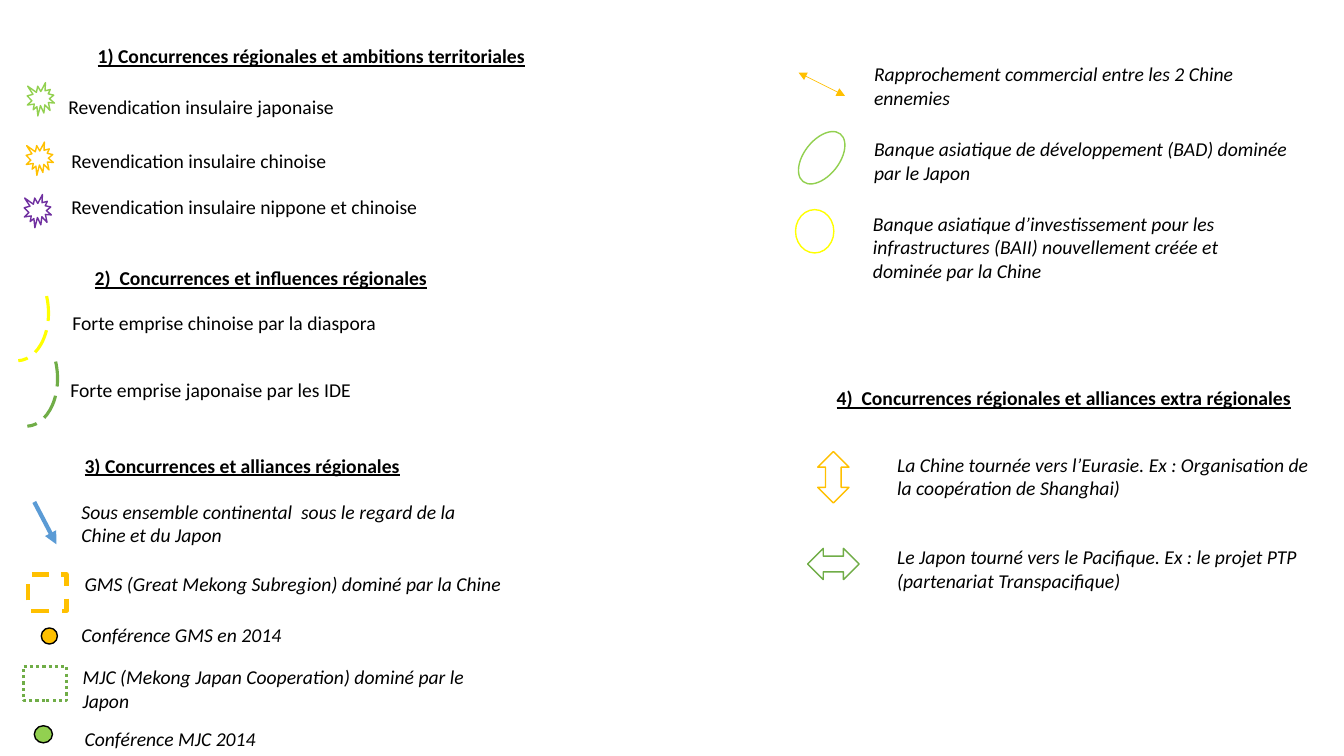
from lxml import etree
from pptx import Presentation
from pptx.dml.color import RGBColor
from pptx.enum.dml import MSO_LINE
from pptx.enum.shapes import MSO_CONNECTOR, MSO_SHAPE
from pptx.enum.text import MSO_AUTO_SIZE
from pptx.oxml.ns import qn
from pptx.util import Inches, Pt

BLACK = RGBColor(0, 0, 0)
BLUE = RGBColor(0x5B, 0x9B, 0xD5)
GOLD = RGBColor(0xFF, 0xC0, 0x00)
YELLOW = RGBColor(0xFF, 0xFF, 0x00)
LIME = RGBColor(0x92, 0xD0, 0x50)
GREEN = RGBColor(0x70, 0xAD, 0x47)
PURPLE = RGBColor(0x70, 0x30, 0xA0)

SEAL, ARC = MSO_SHAPE.EXPLOSION1, MSO_SHAPE.ARC
RECT, OVAL = MSO_SHAPE.RECTANGLE, MSO_SHAPE.OVAL
ARROW = MSO_SHAPE.LEFT_RIGHT_ARROW
STRAIGHT = MSO_CONNECTOR.STRAIGHT
DASH, DOT, LONG = MSO_LINE.DASH, MSO_LINE.ROUND_DOT, MSO_LINE.LONG_DASH
GROW = MSO_AUTO_SIZE.SHAPE_TO_FIT_TEXT

BASE = {"name": "Calibri", "size": Pt(14)}
HEAD = {"bold": True, "underline": True}
PLAIN = {}
ITALIC = {"italic": True}

# style, wrap, then (left, top, width, height, text)
LABELS = [
    (HEAD, False, [
        (0.87, 0.39, 4.47, 0.34, "1) Concurrences régionales et ambitions territoriales"),
        (0.84, 2.59, 3.52, 0.34, "2)  Concurrences et influences régionales"),
        (0.74, 4.45, 3.35, 0.34, "3) Concurrences et alliances régionales"),
        (8.2, 3.78, 4.74, 0.34, "4)  Concurrences régionales et alliances extra régionales"),
    ]),
    (PLAIN, False, [
        (0.58, 0.89, 2.87, 0.34, "Revendication insulaire japonaise"),
        (0.61, 1.43, 2.76, 0.34, "Revendication insulaire chinoise"),
        (0.61, 1.88, 3.67, 0.34, "Revendication insulaire nippone et chinoise"),
        (0.62, 3.04, 3.24, 0.34, "Forte emprise chinoise par la diaspora"),
        (0.6, 3.7, 3.01, 0.34, "Forte emprise japonaise par les IDE"),
    ]),
    (ITALIC, False, [
        (0.74, 5.62, 4.37, 0.34, "GMS (Great Mekong Subregion) dominé par la Chine"),
    ]),
    (ITALIC, True, [
        (0.71, 4.91, 4.33, 0.57,
         "Sous ensemble continental  sous le regard de la Chine et du Japon"),
        (0.71, 6.13, 4.32, 0.34, "Conférence GMS en 2014"),
        (0.72, 6.55, 4.32, 0.57, "MJC (Mekong Japan Cooperation) dominé par le Japon"),
        (0.74, 7.16, 4.32, 0.34, "Conférence MJC 2014"),
        (8.57, 0.57, 4.32, 0.57, "Rapprochement commercial entre les 2 Chine ennemies"),
        (8.57, 1.31, 4.32, 0.57,
         "Banque asiatique de développement (BAD) dominée par le Japon"),
        (8.56, 2.05, 4.32, 0.81,
         "Banque asiatique d’investissement pour les infrastructures (BAII) "
         "nouvellement créée et dominée par la Chine"),
        (8.8, 4.44, 4.42, 0.57,
         "La Chine tournée vers l’Eurasie. Ex : Organisation de la coopération de Shanghai)"),
        (8.8, 5.36, 4.42, 0.57,
         "Le Japon tourné vers le Pacifique. Ex : le projet PTP (partenariat Transpacifique)"),
    ]),
]

# kind, (left, top, width, height), rotation, line colour, line width, dash, fill
SIGNS = [
    (SEAL, (0.27, 0.82, 0.27, 0.33), 0, LIME, 1, None, None),
    (SEAL, (0.26, 1.41, 0.27, 0.33), 0, GOLD, 1, None, None),
    (SEAL, (0.24, 1.93, 0.27, 0.33), 0, PURPLE, 1, None, None),
    (ARC, (-0.35, 2.75, 1, 0.66), 86.4, YELLOW, 2.25, LONG, None),
    (ARC, (-0.26, 3.4, 1, 0.66), 86.4, GREEN, 2.25, LONG, None),
    (RECT, (0.28, 5.7, 0.38, 0.36), 0, GOLD, 3, DASH, None),
    (OVAL, (0.41, 6.23, 0.16, 0.16), 0, BLACK, 1, None, GOLD),
    (RECT, (0.23, 6.61, 0.43, 0.34), 0, GREEN, 2.25, DOT, None),
    (OVAL, (0.34, 7.2, 0.18, 0.17), 0, BLACK, 1, None, LIME),
    (OVAL, (7.85, 1.39, 0.6, 0.35), 308, LIME, 1, None, None),
    (OVAL, (7.89, 2.08, 0.38, 0.43), 0, YELLOW, 1, None, None),
    (ARROW, (8.01, 4.58, 0.51, 0.31), 90, GOLD, 1, None, None),
    (ARROW, (8.01, 5.44, 0.51, 0.31), 180, GREEN, 1, None, None),
]

# (x1, y1, x2, y2), colour, width, ends with an arrowhead
LINES = [
    ((0.34, 4.98, 0.56, 5.4), BLUE, 3, ["tailEnd"]),
    ((7.92, 0.72, 8.38, 0.95), GOLD, 0.5, ["headEnd", "tailEnd"]),
]


def inches(nums):
    return [Inches(n) for n in nums]


def add_label(slide, box, text, style, wrap):
    frame = slide.shapes.add_textbox(*inches(box)).text_frame
    frame.word_wrap = wrap
    frame.auto_size = GROW
    run = frame.paragraphs[0].add_run()
    run.text = text
    for key, value in {**BASE, **style}.items():
        setattr(run.font, key, value)
    run.font.color.rgb = BLACK


def add_sign(slide, kind, box, turn, color, width, dash, fill):
    sign = slide.shapes.add_shape(kind, *inches(box))
    sign.shadow.inherit = False
    sign.rotation = turn
    if kind == ARC:
        sign.adjustments[0] = 149.407
        sign.adjustments[1] = 0
    if fill is None:
        sign.fill.background()
    else:
        sign.fill.solid()
        sign.fill.fore_color.rgb = fill
    sign.line.color.rgb = color
    sign.line.width = Pt(width)
    if dash is not None:
        sign.line.dash_style = dash


def add_line(slide, ends, color, width, heads):
    link = slide.shapes.add_connector(STRAIGHT, *inches(ends))
    link.line.color.rgb = color
    link.line.width = Pt(width)
    props = link.line._get_or_add_ln()
    for head in heads:
        etree.SubElement(props, qn("a:" + head), type="triangle")
    etree.SubElement(link._element.spPr, qn("a:effectLst"))


def main():
    deck = Presentation()
    deck.slide_width, deck.slide_height = Inches(13.33), Inches(7.5)
    slide = deck.slides.add_slide(deck.slide_layouts[6])
    for sign in SIGNS:
        add_sign(slide, *sign)
    for line in LINES:
        add_line(slide, *line)
    for style, wrap, rows in LABELS:
        for *box, text in rows:
            add_label(slide, box, text, style, wrap)
    deck.save("out.pptx")


if __name__ == "__main__":
    main()
